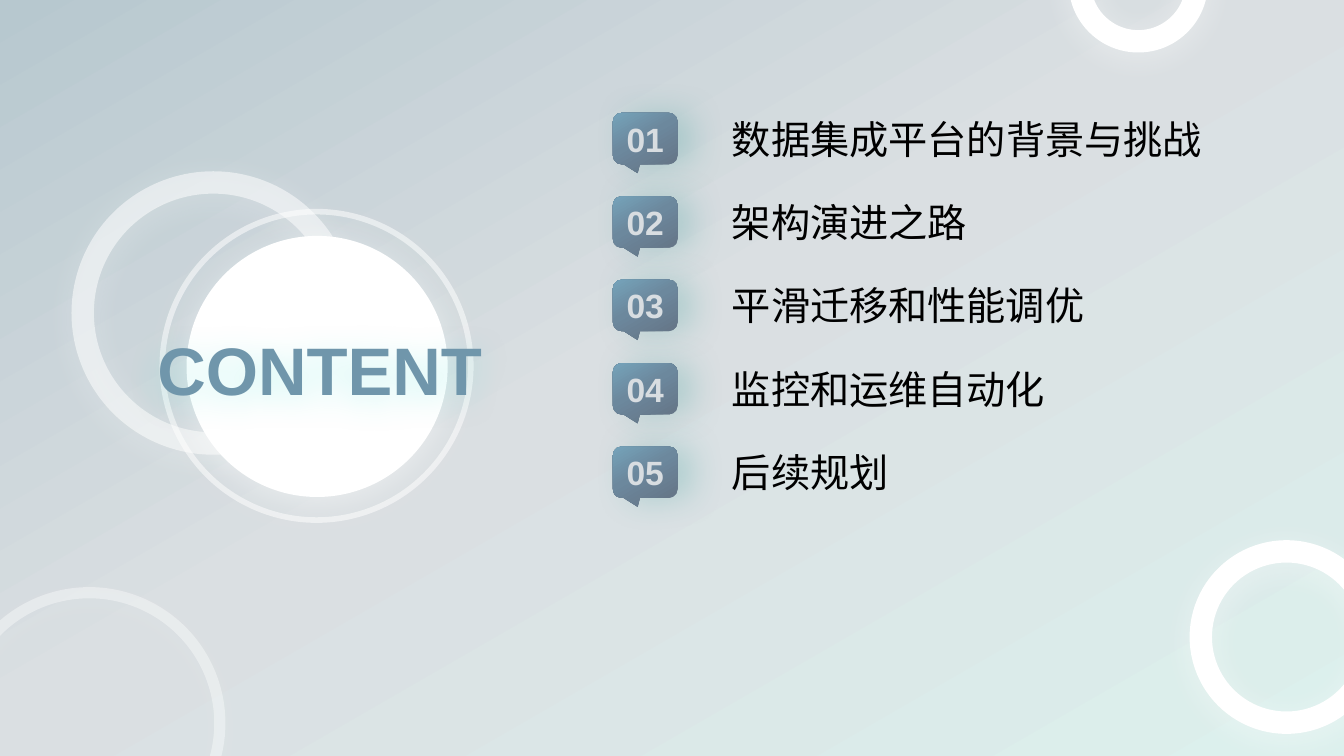
from dataclasses import dataclass

from lxml.etree import SubElement
from pptx import Presentation
from pptx.dml.color import RGBColor
from pptx.enum.shapes import MSO_SHAPE
from pptx.enum.text import MSO_ANCHOR, MSO_AUTO_SIZE, PP_ALIGN
from pptx.oxml.ns import qn
from pptx.util import Inches, Pt


@dataclass(frozen=True)
class Theme:
    white: str = "FFFFFF"
    heading: str = "7096AB"
    topic: str = "000000"
    number: str = "D8DDE1"
    background: tuple = ((0, "DCF0ED"), (53, "DADFE2"), (100, "B7C8CF"))
    badge: tuple = ((0, "657587"), (53, "6C889D"), (100, "75A3BA"))
    gradient_angle: int = 120
    circle_shadow: tuple = ("FFFFFF", 43, 24, 4, 90)
    badge_shadow: tuple = ("01857C", 20, 24, 10, 0)
    heading_shadow: tuple = ("00D8C8", 20, 24, 4, 90)
    heading_font: str = "Arial"
    topic_font: str = "Open Sans"
    heading_size: int = 48
    topic_size: int = 28
    number_size: int = 24


THEME = Theme()
TOPICS = ["数据集成平台的背景与挑战", "架构演进之路", "平滑迁移和性能调优",
          "监控和运维自动化", "后续规划"]


def add_color(parent, color, opacity):
    element = SubElement(parent, qn("a:srgbClr"), val=color)
    SubElement(element, qn("a:alpha"), val=str(opacity * 1000))


def set_gradient(fill, holder, stops):
    fill.gradient()
    fill.gradient_angle = THEME.gradient_angle
    stop_list = next(holder.iter(qn("a:gsLst")))
    for stop in list(stop_list):
        stop_list.remove(stop)
    for position, color in stops:
        stop = SubElement(stop_list, qn("a:gs"), pos=str(position * 1000))
        add_color(stop, color, 100)


def set_shadow(shape, shadow):
    color, opacity, blur, distance, direction = shadow
    shape.shadow.inherit = False
    effects = shape._element.spPr.find(qn("a:effectLst"))
    outer = SubElement(effects, qn("a:outerShdw"), blurRad=str(Pt(blur)),
                       dist=str(Pt(distance)), dir=str(direction * 60000),
                       algn="ctr", rotWithShape="0")
    add_color(outer, color, opacity)


def set_text(shape, text, font_name, size, color, bold=False):
    frame = shape.text_frame
    frame.margin_left = frame.margin_top = frame.margin_right = frame.margin_bottom = 0
    frame.text = text
    run = frame.paragraphs[0].runs[0]
    run.font.name = font_name
    run.font.size = Pt(size)
    run.font.bold = bold
    run.font.color.rgb = RGBColor.from_string(color)
    SubElement(run.font._element, qn("a:ea"), typeface=font_name)


def add_label(shapes, left, top, width, height, text, font_name, size, color, bold=False):
    label = shapes.add_textbox(Inches(left), Inches(top), Inches(width), Inches(height))
    set_text(label, text, font_name, size, color, bold)
    label.text_frame.word_wrap = False
    label.text_frame.auto_size = MSO_AUTO_SIZE.SHAPE_TO_FIT_TEXT
    return label


def add_circle(shapes, left, top, diameter, line_width=0, opacity=100):
    circle = shapes.add_shape(MSO_SHAPE.OVAL, Inches(left), Inches(top),
                              Inches(diameter), Inches(diameter))
    if line_width:
        circle.fill.background()
        circle.line.color.rgb = RGBColor.from_string(THEME.white)
        circle.line.width = Pt(line_width)
        color = next(circle.line._ln.iter(qn("a:srgbClr")))
        SubElement(color, qn("a:alpha"), val=str(opacity * 1000))
    else:
        circle.fill.solid()
        circle.fill.fore_color.rgb = RGBColor.from_string(THEME.white)
        circle.line.fill.background()
    set_shadow(circle, THEME.circle_shadow)


def add_heading(slide, left, top):
    circles = slide.shapes.add_group_shape().shapes
    add_circle(circles, left, top, 2.59, 16, 53)
    add_circle(circles, left + 1.03, top + 0.53, 2.59)
    add_circle(circles, left + 0.79, top + 0.29, 3.06, 4, 53)
    heading = add_label(slide.shapes, left + 0.74, top + 1.45, 3.25, 0.81, "CONTENT",
                        THEME.heading_font, THEME.heading_size, THEME.heading, True)
    set_shadow(heading, THEME.heading_shadow)


def add_badge(slide, left, top, width, height, text):
    badge = slide.shapes.add_shape(MSO_SHAPE.ROUNDED_RECTANGULAR_CALLOUT, Inches(left),
                                   Inches(top), Inches(width), Inches(height))
    for index, value in enumerate((-0.118, 0.673, 0.167)):
        badge.adjustments[index] = value
    set_gradient(badge.fill, badge._element.spPr, THEME.badge)
    badge.line.fill.background()
    set_shadow(badge, THEME.badge_shadow)
    set_text(badge, text, THEME.heading_font, THEME.number_size, THEME.number, True)
    badge.text_frame.vertical_anchor = MSO_ANCHOR.MIDDLE
    badge.text_frame.paragraphs[0].alignment = PP_ALIGN.CENTER


def add_agenda(slide, left, top, height):
    badge_width, badge_height = 0.64, 0.51
    pitch = (height - badge_height) / (len(TOPICS) - 1)
    for index, topic in enumerate(TOPICS):
        row_top = top + index * pitch
        add_badge(slide, left, row_top, badge_width, badge_height, f"{index + 1:02d}")
        add_label(slide.shapes, left + 1.18, row_top + 0.02,
                  len(topic) * THEME.topic_size / 72, 0.47, topic,
                  THEME.topic_font, THEME.topic_size, THEME.topic)


def add_corner_rings(slide, width, height):
    add_circle(slide.shapes, width - 1.42, height - 2.03, 1.7, 16)
    add_circle(slide.shapes, -0.41, height - 1.62, 2.59, 8, 38)
    add_circle(slide.shapes, width - 2.62, -0.75, 1.16, 16)


def main():
    width, height = 13.33, 7.5
    presentation = Presentation()
    presentation.slide_width = Inches(width)
    presentation.slide_height = Inches(height)
    slide = presentation.slides.add_slide(presentation.slide_layouts[6])
    set_gradient(slide.background.fill, slide._element, THEME.background)
    add_corner_rings(slide, width, height)
    add_heading(slide, 0.82, 1.81)
    add_agenda(slide, 6.08, 1.12, 3.82)
    presentation.save("out.pptx")


if __name__ == "__main__":
    main()
